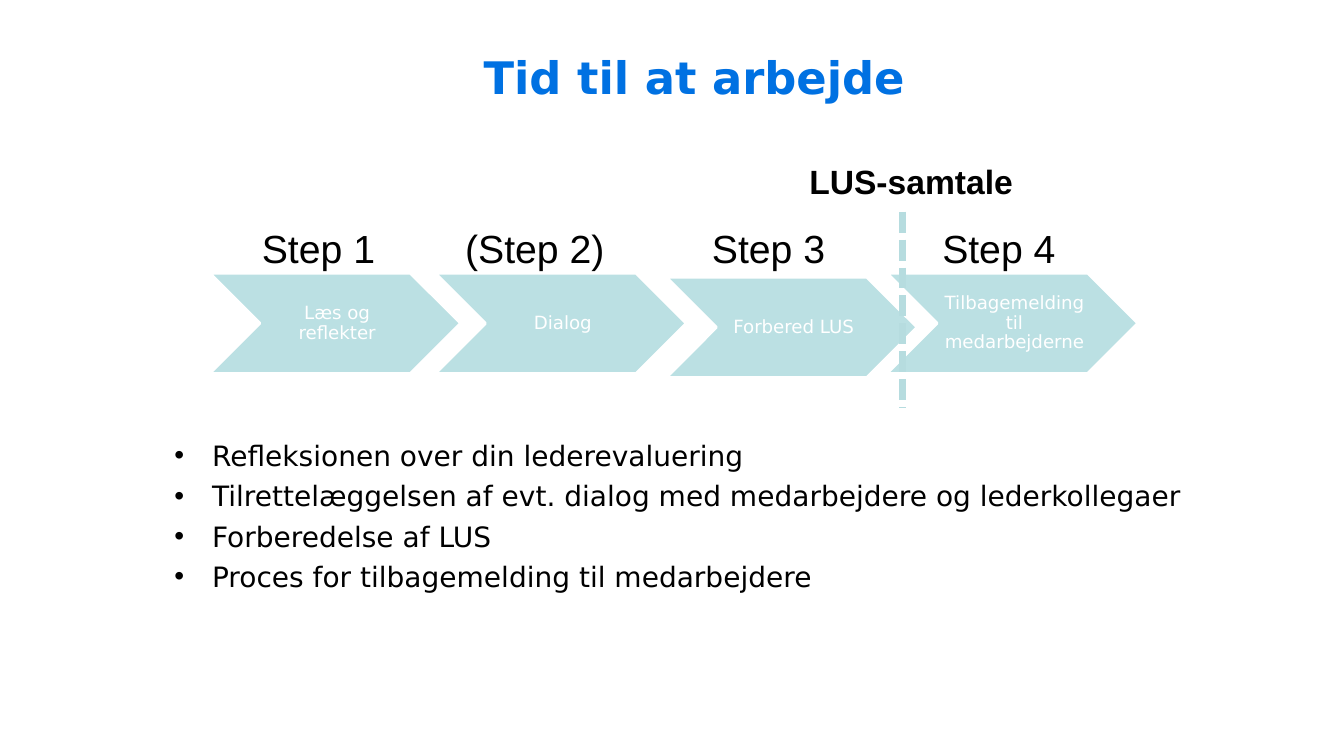
from lxml import etree
from pptx import Presentation
from pptx.dml.color import RGBColor
from pptx.enum.dml import MSO_LINE
from pptx.enum.shapes import MSO_CONNECTOR, MSO_SHAPE
from pptx.enum.text import MSO_ANCHOR, PP_ALIGN
from pptx.oxml.ns import qn
from pptx.util import Pt

BLUE = RGBColor(0x00, 0x71, 0xE2)
TEAL = RGBColor(0xBB, 0xE0, 0xE3)
DASH = RGBColor(0xB6, 0xDC, 0xDF)
WHITE = RGBColor(0xFF, 0xFF, 0xFF)
BLACK = RGBColor(0, 0, 0)
CENTER, LEFT = PP_ALIGN.CENTER, PP_ALIGN.LEFT
TOP, MIDDLE = MSO_ANCHOR.TOP, MSO_ANCHOR.MIDDLE
CHEVRON = MSO_SHAPE.CHEVRON
STRAIGHT = MSO_CONNECTOR.STRAIGHT
SYS_DASH = MSO_LINE.SQUARE_DOT

HEAD = {"name": "DejaVu Sans", "size": Pt(32), "bold": True}
STEP = {"name": "Arial", "size": Pt(28)}
TALK = {"name": "Arial", "size": Pt(24), "bold": True}
TASK = {"name": "DejaVu Sans", "size": Pt(13)}
ITEM = {"name": "DejaVu Sans", "size": Pt(20)}

STEPS = [
    ("Step 1", 227.5, "Læs og reflekter", 149.8, 195.1),
    ("(Step 2)", 382, "Dialog", 311, 195.1),
    ("Step 3", 549, "Forbered LUS", 475.9, 198),
    ("Step 4", 713.5, "Tilbagemelding til medarbejderne", 633.6, 195.1),
]
ITEMS = [
    "Refleksionen over din lederevaluering",
    "Tilrettelæggelsen af evt. dialog med medarbejdere og lederkollegaer",
    "Forberedelse af LUS",
    "Proces for tilbagemelding til medarbejdere",
]


def set_all(obj, values):
    """Set each attribute named in a dict."""
    for key, value in values.items():
        setattr(obj, key, value)


def style(para, font, color, align):
    """Format one paragraph."""
    para.alignment = align
    set_all(para.font, font)
    para.font.color.rgb = color


def add_text(slide, box, lines, font, color=BLACK, align=CENTER, anchor=TOP):
    """Add a text box and return its paragraphs."""
    frame = slide.shapes.add_textbox(*map(Pt, box)).text_frame
    set_all(frame, {"word_wrap": True, "vertical_anchor": anchor})
    frame.text = "\n".join(lines)
    for para in frame.paragraphs:
        style(para, font, color, align)
    return frame.paragraphs


def add_task(slide, left, top, text):
    """Add a chevron with its task."""
    shape = slide.shapes.add_shape(CHEVRON, Pt(left), Pt(top), Pt(179.2), Pt(71.7))
    shape.shadow.inherit = False
    shape.fill.solid()
    shape.fill.fore_color.rgb = TEAL
    shape.line.color.rgb = WHITE
    shape.line.width = Pt(2)
    frame = shape.text_frame
    set_all(frame, {
        "word_wrap": True, "vertical_anchor": MIDDLE, "text": text,
        "margin_left": Pt(4.2), "margin_right": Pt(1.4),
        "margin_top": Pt(1.4), "margin_bottom": Pt(1.4),
    })
    para = frame.paragraphs[0]
    para.line_spacing = 0.9
    style(para, TASK, WHITE, CENTER)


def add_dash(slide, x, top, end):
    """Add a dashed upright line."""
    line = slide.shapes.add_connector(STRAIGHT, Pt(x), Pt(top), Pt(x), Pt(end))
    line.line.color.rgb = DASH
    set_all(line.line, {"width": Pt(5), "dash_style": SYS_DASH})
    props = line.element.find(qn("p:spPr"))
    etree.SubElement(props, qn("a:effectLst"))


def add_list(slide, box, lines):
    """Add a bulleted list."""
    frame = slide.shapes.add_textbox(*map(Pt, box)).text_frame
    frame.word_wrap = True
    frame.text = "\n".join(lines)
    for rank, para in enumerate(frame.paragraphs):
        para.space_before = Pt(4.8 if rank else 0)
        props = para._p.get_or_add_pPr()
        props.set("marL", str(Pt(27)))
        props.set("indent", str(Pt(-27)))
        etree.SubElement(props, qn("a:buFont"), typeface="Arial")
        etree.SubElement(props, qn("a:buChar"), char="•")
        style(para, ITEM, BLACK, LEFT)


def main():
    """Build and save the slide."""
    deck = Presentation()
    set_all(deck, {"slide_width": Pt(960), "slide_height": Pt(540)})
    slide = deck.slides.add_slide(deck.slide_layouts[6])
    for _, _, task, left, top in STEPS:
        add_task(slide, left, top, task)
    add_text(slide, (64, 9.4, 864, 90), ["Tid til at arbejde"], HEAD, BLUE, anchor=MIDDLE)
    for name, mid, *_ in STEPS:
        add_text(slide, (mid - 90, 157, 180, 41), [name], STEP)
    add_dash(slide, 644.4, 151.2, 291.6)
    add_text(slide, (571, 111.6, 168, 36), ["LUS-samtale"], TALK, align=LEFT)
    add_list(slide, (117.4, 309.6, 800, 209), ITEMS)
    deck.save("out.pptx")


if __name__ == "__main__":
    main()
